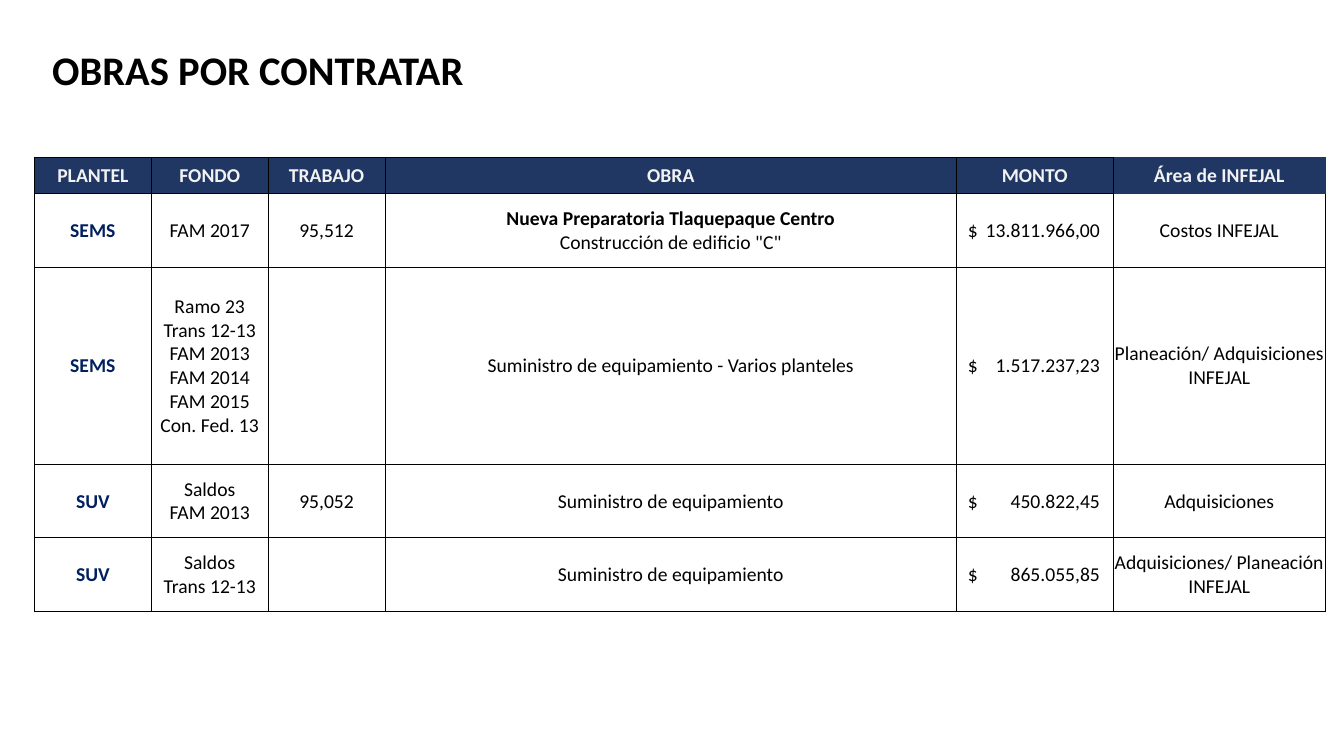
from dataclasses import dataclass

from lxml import etree
from pptx import Presentation
from pptx.dml.color import RGBColor
from pptx.enum.text import MSO_ANCHOR, PP_ALIGN
from pptx.oxml.ns import qn
from pptx.util import Pt

CENTER, LEFT = PP_ALIGN.CENTER, PP_ALIGN.LEFT
MIDDLE = MSO_ANCHOR.MIDDLE
FONT = "Calibri"
COLORS = {
    "header": "203764",
    "header_text": "F2F2F2",
    "plantel": "002060",
    "text": "000000",
    "body": "FFFFFF",
    "border": "000000",
}
NO_STYLE = "{2D5ABB26-0587-4C30-8999-92F81FD0307C}"
COL_WIDTHS = [83.5, 83.5, 83.5, 408.3, 111.6, 152]
ROW_HEIGHTS = [26.2, 52.4, 140.8, 52.4, 52.4]
HEADERS = ["PLANTEL", "FONDO", "TRABAJO", "OBRA", "MONTO", "Área de INFEJAL"]
AMOUNT_INDENT, AMOUNT_TAB = 8, 94.5


@dataclass
class Work:
    plantel: str
    fondo: str
    trabajo: str
    obra: str
    monto: str
    area: str
    heading: str = ""


WORKS = [
    Work("SEMS", "FAM 2017", "95,512", 'Construcción de edificio "C"',
         "13.811.966,00", "Costos INFEJAL", "Nueva Preparatoria Tlaquepaque Centro"),
    Work("SEMS", "Ramo 23\nTrans 12-13\nFAM 2013\nFAM 2014\nFAM 2015\nCon. Fed. 13", "",
         "Suministro de equipamiento - Varios planteles",
         "1.517.237,23", "Planeación/ Adquisiciones INFEJAL"),
    Work("SUV", "Saldos\nFAM 2013", "95,052", "Suministro de equipamiento",
         "450.822,45", "Adquisiciones"),
    Work("SUV", "Saldos\nTrans 12-13", "", "Suministro de equipamiento",
         "865.055,85", "Adquisiciones/ Planeación INFEJAL"),
]


def add_run(p, text: str, size: float, color: str, bold: bool = False) -> None:
    r = p.add_run()
    r.text = text
    r.font.name, r.font.size, r.font.bold = FONT, Pt(size), bold
    r.font.color.rgb = RGBColor.from_string(COLORS[color])


def add_borders(cell, sides: str) -> None:
    """Draw a thin line on each side named by L, R, T or B, in that order."""
    tc_pr = cell._tc.get_or_add_tcPr()
    for side in sides:
        ln = etree.SubElement(tc_pr, qn(f"a:ln{side}"), w=str(Pt(0.5)))
        fill = etree.SubElement(ln, qn("a:solidFill"))
        etree.SubElement(fill, qn("a:srgbClr"), val=COLORS["border"])


def add_right_tab(p, position: float) -> None:
    tabs = etree.SubElement(p._p.get_or_add_pPr(), qn("a:tabLst"))
    etree.SubElement(tabs, qn("a:tab"), pos=str(Pt(position)), algn="r")


def fill_cell(cell, text: str, fill: str, color: str, bold: bool = False,
              heading: str = "", sides: str = "LRTB", amount: bool = False) -> None:
    add_borders(cell, sides)
    cell.fill.solid()
    cell.fill.fore_color.rgb = RGBColor.from_string(COLORS[fill])
    cell.vertical_anchor = MIDDLE
    cell.margin_left = Pt(AMOUNT_INDENT if amount else 0.7)
    cell.margin_right = cell.margin_top = Pt(0.7)
    cell.margin_bottom = 0
    p = cell.text_frame.paragraphs[0]
    p.alignment = LEFT if amount else CENTER
    if amount:
        add_right_tab(p, AMOUNT_TAB)
        text = f"$\t{text}"
    if heading:
        add_run(p, heading, 14, color, True)
        p.add_line_break()
    for i, line in enumerate(text.split("\n") if text else []):
        if i:
            p.add_line_break()
        add_run(p, line, 14, color, bold)


def add_title(slide, text: str) -> None:
    tf = slide.shapes.add_textbox(Pt(30.2), Pt(28.8), Pt(480), Pt(42.5)).text_frame
    tf.word_wrap = True
    add_run(tf.paragraphs[0], text, 29, "text", True)


def add_works_table(slide) -> None:
    frame = slide.shapes.add_table(len(ROW_HEIGHTS), len(COL_WIDTHS), Pt(24.6), Pt(112.2),
                                   Pt(sum(COL_WIDTHS)), Pt(sum(ROW_HEIGHTS)))
    table = frame.table
    table._tbl.tblPr.find(qn("a:tableStyleId")).text = NO_STYLE
    table.horz_banding = False
    for col, width in zip(table.columns, COL_WIDTHS):
        col.width = Pt(width)
    for row, height in zip(table.rows, ROW_HEIGHTS):
        row.height = Pt(height)

    last = len(HEADERS) - 1
    for c, name in enumerate(HEADERS):
        fill_cell(table.cell(0, c), name, "header", "header_text", True,
                  sides="L" if c == last else "LRTB")
    for r, work in enumerate(WORKS, start=1):
        fill_cell(table.cell(r, 0), work.plantel, "body", "plantel", True)
        fill_cell(table.cell(r, 1), work.fondo, "body", "text")
        fill_cell(table.cell(r, 2), work.trabajo, "body", "text")
        fill_cell(table.cell(r, 3), work.obra, "body", "text", heading=work.heading)
        fill_cell(table.cell(r, 4), work.monto, "body", "text", amount=True)
        fill_cell(table.cell(r, last), work.area, "body", "text",
                  sides="LRB" if r == 1 else "LRTB")


def main() -> None:
    prs = Presentation()
    prs.slide_width, prs.slide_height = Pt(960), Pt(540)
    slide = prs.slides.add_slide(prs.slide_layouts[6])
    add_works_table(slide)
    add_title(slide, "OBRAS POR CONTRATAR")
    prs.save("out.pptx")


if __name__ == "__main__":
    main()
